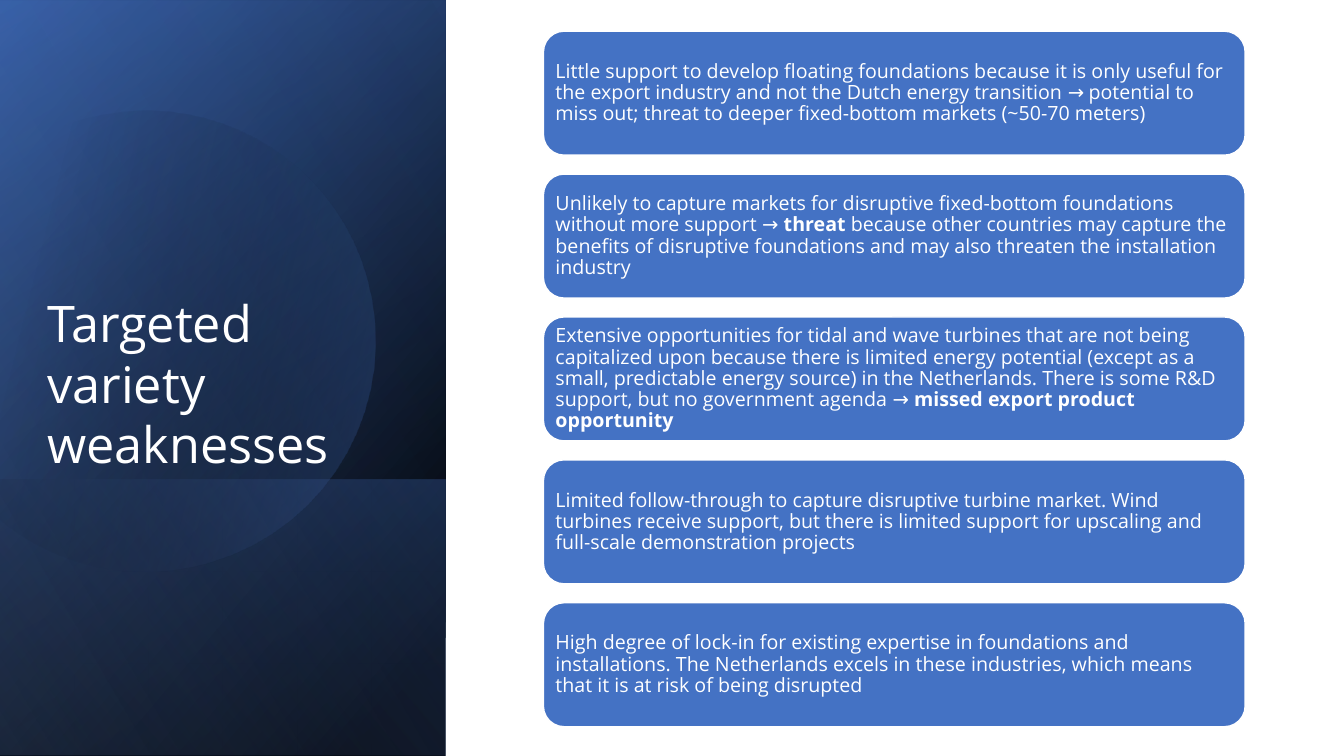
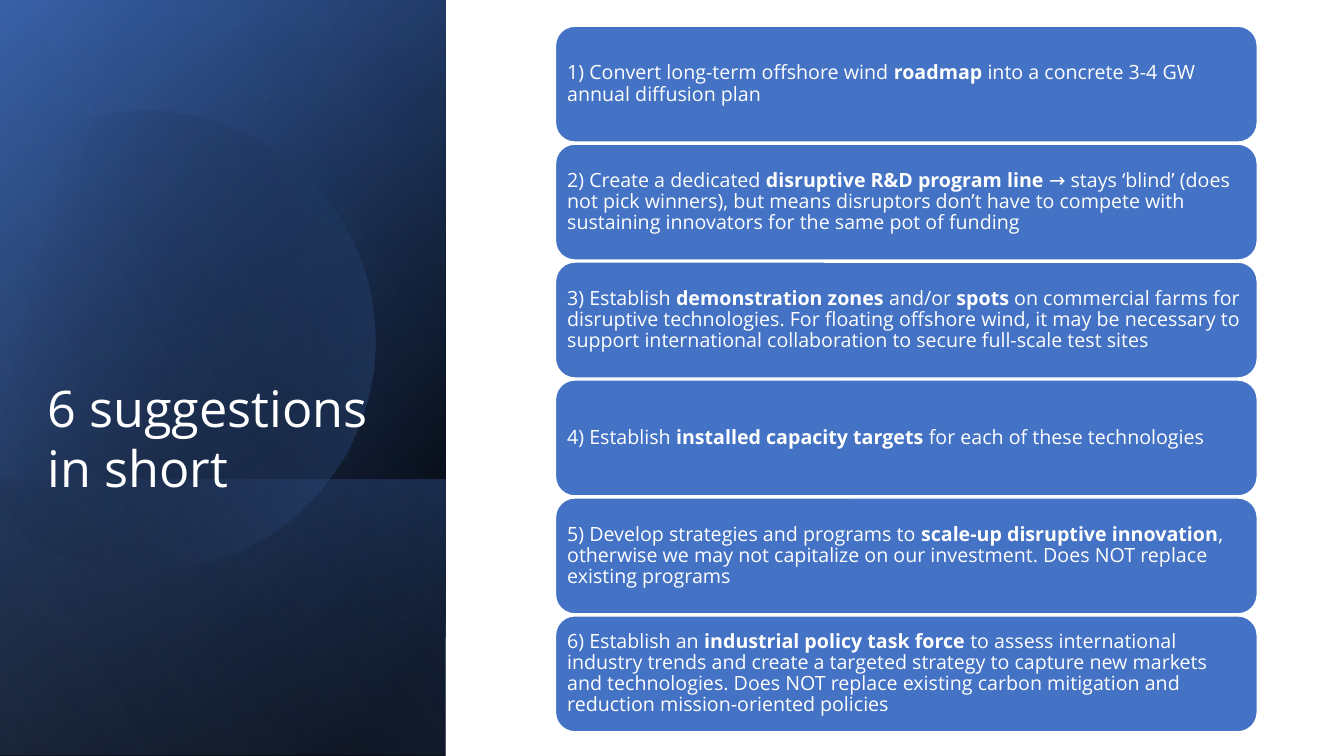
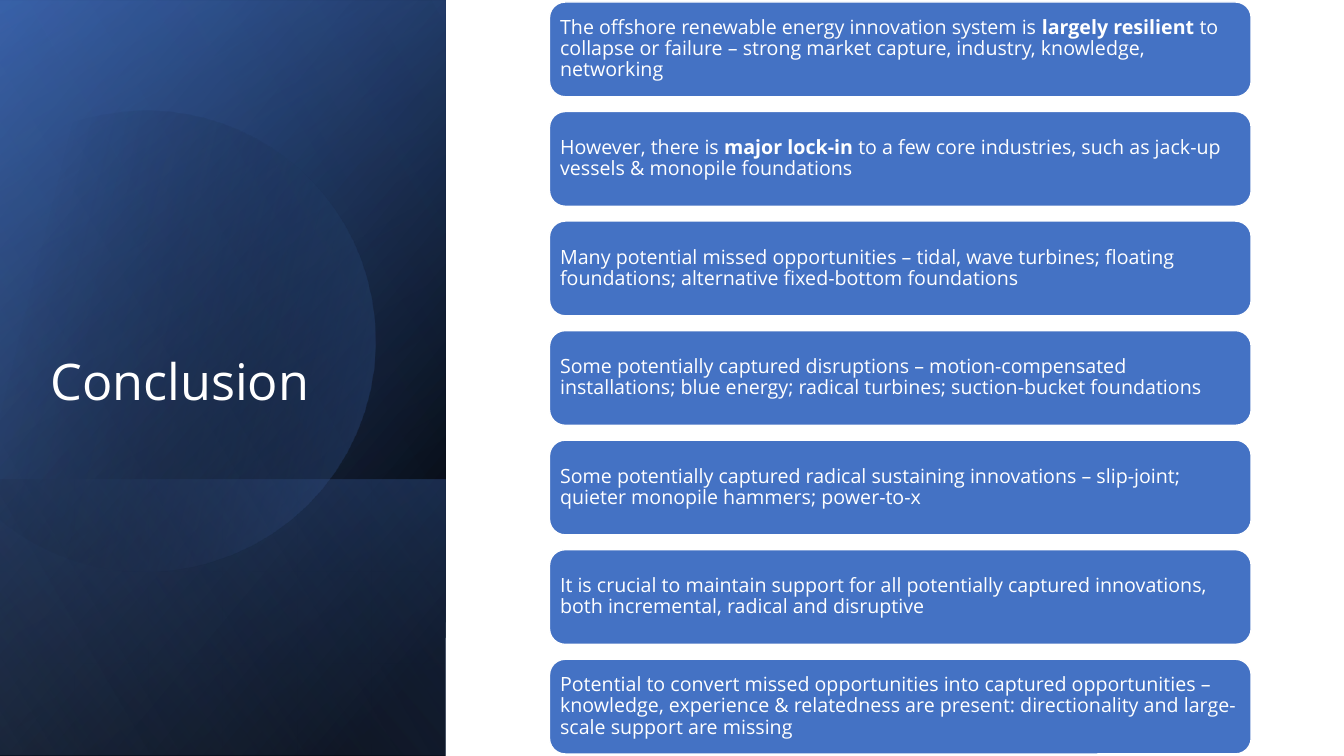
from math import cos, radians, sin

from lxml.etree import SubElement
from pptx import Presentation
from pptx.dml.color import RGBColor
from pptx.enum.shapes import MSO_SHAPE as SHAPE
from pptx.enum.text import MSO_ANCHOR as ANCHOR, MSO_AUTO_SIZE as AUTO_SIZE, PP_ALIGN as ALIGN
from pptx.oxml.ns import qn
from pptx.util import Inches, Pt

WHITE = RGBColor(0xFF, 0xFF, 0xFF)
BLACK = RGBColor(0x00, 0x00, 0x00)
BLUE = RGBColor(0x44, 0x72, 0xC4)
DARK_BLUE = RGBColor(0x2F, 0x55, 0x97)
LIGHT_BLUE = RGBColor(0x8F, 0xAA, 0xDC)
FONT = "Open Sans"

CARD_WIDTH = 6.96
CARD_INSET = Inches(0.06)

BASE_BANDS = [
    ((-1.54, 1.54, 7.5, 4.42), 50, [(8, BLACK, 100), (100, DARK_BLUE, 100)]),
    ((-1.54, 1.55, 7.5, 4.42), 30, [(0, BLACK, 0), (99, BLUE, 46)]),
    ((0.84, 3.92, 2.74, 4.42), 130, [(2, BLUE, 29), (100, BLACK, 30)]),
]
GLOSS_BAND = ((-1.54, 1.53, 7.5, 4.42), 120, [(0, BLACK, 0), (99, LIGHT_BLUE, 11)])

DISC_CENTER = (1.59, 3.35)
DISC_ROTATION = 343.9
DISC_START = (1.49, 1.1)
DISC_SEGMENTS = [
    [(2.46, 1.12), (3.35, 1.77), (3.63, 2.75)],
    [(3.98, 3.97), (3.28, 5.23), (2.07, 5.58)],
    [(1.31, 5.8), (0.53, 5.61), (-0.03, 5.14)],
    [(-0.15, 5.03)],
    [(-0.15, 1.75)],
    [(0, 1.61)],
    [(0.23, 1.42), (0.5, 1.28), (0.8, 1.19)],
    [(1.03, 1.13), (1.26, 1.1), (1.49, 1.1)],
]

WEAKNESSES = [
    "Little support to develop floating foundations because it is only useful for the export "
    "industry and not the Dutch energy transition → potential to miss out; threat to deeper "
    "fixed-bottom markets (~50-70 meters)",
    "Unlikely to capture markets for disruptive fixed-bottom foundations without more support → "
    "**threat** because other countries may capture the benefits of disruptive foundations and "
    "may also threaten the installation industry",
    "Extensive opportunities for tidal and wave turbines that are not being capitalized upon "
    "because there is limited energy potential (except as a small, predictable energy source) in "
    "the Netherlands. There is some R&D support, but no government agenda → "
    "**missed export product opportunity**",
    "Limited follow-through to capture disruptive turbine market. Wind turbines receive support, "
    "but there is limited support for upscaling and full-scale demonstration projects",
    "High degree of lock-in for existing expertise in foundations and installations. The "
    "Netherlands excels in these industries, which means that it is at risk of being disrupted",
]
SUGGESTIONS = [
    "1) Convert long-term offshore wind **roadmap** into a concrete 3-4 GW annual diffusion plan",
    "2) Create a dedicated **disruptive R&D program line **→ stays ‘blind’ (does not pick "
    "winners), but means disruptors don’t have to compete with sustaining innovators for the "
    "same pot of funding",
    "3) Establish **demonstration zones** and/or **spots** on commercial farms for disruptive "
    "technologies. For floating offshore wind, it may be necessary to support international "
    "collaboration to secure full-scale test sites",
    "4) Establish **installed capacity targets** for each of these technologies",
    "5) Develop strategies and programs to **scale-up disruptive innovation**, otherwise we may "
    "not capitalize on our investment. Does NOT replace existing programs",
    "6) Establish an **industrial policy task force** to assess international industry trends "
    "and create a targeted strategy to capture new markets and technologies. Does NOT replace "
    "existing carbon mitigation and reduction mission-oriented policies",
]
CONCLUSIONS = [
    "The offshore renewable energy innovation system is **largely resilient** to collapse or "
    "failure – strong market capture, industry, knowledge, networking",
    "However, there is **major lock-in** to a few core industries, such as jack-up vessels & "
    "monopile foundations",
    "Many potential missed opportunities – tidal, wave turbines; floating foundations; "
    "alternative fixed-bottom foundations",
    "Some potentially captured disruptions – motion-compensated installations; blue energy; "
    "radical turbines; suction-bucket foundations",
    "Some potentially captured radical sustaining innovations – slip-joint; quieter monopile "
    "hammers; power-to-x",
    "It is crucial to maintain support for all potentially captured innovations, both "
    "incremental, radical and disruptive",
    "Potential to convert missed opportunities into captured opportunities – knowledge, "
    "experience & relatedness are present: directionality and large-scale support are missing",
]


def style_run(run, size, bold=False):
    run.font.name = FONT
    run.font.size = Pt(size)
    run.font.bold = bold
    run.font.color.rgb = WHITE


def apply_gradient(shape, angle, stops):
    shape.shadow.inherit = False
    shape.line.fill.background()
    shape.fill.gradient()
    shape.fill.gradient_angle = 360 - angle
    for stop, (position, color, _) in zip(shape.fill.gradient_stops, stops):
        stop.position = position / 100
        stop.color.rgb = color
    colors = shape.element.spPr.iter(qn("a:srgbClr"))
    for color, (_, _, opacity) in zip(list(colors), stops):
        if opacity < 100:
            SubElement(color, qn("a:alpha")).set("val", str(opacity * 1000))


def add_band(slide, frame, angle, stops):
    band = slide.shapes.add_shape(SHAPE.RECTANGLE, *map(Inches, frame))
    band.rotation = 90
    band.element.spPr.get_or_add_xfrm().set("flipH", "1")
    apply_gradient(band, angle, stops)


def bezier_points(start, first, second, end, steps=16):
    for step in range(1, steps + 1):
        t = step / steps
        weights = ((1 - t) ** 3, 3 * t * (1 - t) ** 2, 3 * t * t * (1 - t), t ** 3)
        yield tuple(
            sum(weight * value for weight, value in zip(weights, axis))
            for axis in zip(start, first, second, end)
        )


def disc_outline():
    outline = [DISC_START]
    for segment in DISC_SEGMENTS:
        outline += bezier_points(outline[-1], *segment) if len(segment) == 3 else segment
    return outline


def turn_back(point):
    turn = radians(-DISC_ROTATION)
    center_x, center_y = DISC_CENTER
    dx, dy = point[0] - center_x, point[1] - center_y
    return (
        Inches(center_x + dx * cos(turn) - dy * sin(turn)),
        Inches(center_y + dx * sin(turn) + dy * cos(turn)),
    )


def add_disc(slide):
    start, *others = map(turn_back, disc_outline())
    builder = slide.shapes.build_freeform(*start)
    builder.add_line_segments(others, close=True)
    disc = builder.convert_to_shape()
    disc.rotation = DISC_ROTATION
    apply_gradient(disc, 30, [(29, BLACK, 0), (100, BLUE, 43)])


def place_title(slide, text, frame, align):
    title = slide.shapes.title
    slide.shapes.element.append(title.element)
    title.left, title.top, title.width, title.height = map(Inches, frame)
    title.text_frame.text = text
    title.text_frame.word_wrap = True
    title.text_frame.auto_size = AUTO_SIZE.NONE
    title.text_frame.vertical_anchor = ANCHOR.BOTTOM
    paragraph = title.text_frame.paragraphs[0]
    paragraph.alignment = align
    style_run(paragraph.runs[0], 36)


def add_card(slide, text, left, top, height):
    card = slide.shapes.add_shape(
        SHAPE.ROUNDED_RECTANGLE, Inches(left), Inches(top), Inches(CARD_WIDTH), Inches(height)
    )
    card.shadow.inherit = False
    card.fill.solid()
    card.fill.fore_color.rgb = BLUE
    card.line.color.rgb = WHITE
    card.line.width = Pt(1)
    frame = card.text_frame
    frame.word_wrap = True
    frame.vertical_anchor = ANCHOR.MIDDLE
    frame.margin_left = frame.margin_right = CARD_INSET
    frame.margin_top = frame.margin_bottom = CARD_INSET
    paragraph = frame.paragraphs[0]
    paragraph.alignment = ALIGN.LEFT
    paragraph.line_spacing = 0.9
    for index, part in enumerate(text.split("**")):
        if part:
            run = paragraph.add_run()
            run.text = part
            style_run(run, 14, bold=index % 2 == 1)


def add_cards(slide, texts, left, first_top, last_top, height):
    pitch = (last_top - first_top) / (len(texts) - 1)
    for row, text in enumerate(texts):
        add_card(slide, text, left, first_top + row * pitch, height)


def add_panel_slide(deck, title, title_frame, align, cards, card_column):
    slide = deck.slides.add_slide(deck.slide_layouts[5])
    for band in BASE_BANDS:
        add_band(slide, *band)
    add_disc(slide)
    add_band(slide, *GLOSS_BAND)
    place_title(slide, title, title_frame, align)
    add_cards(slide, cards, *card_column)


def main():
    deck = Presentation()
    deck.slide_width, deck.slide_height = Inches(13.33), Inches(7.5)
    add_panel_slide(deck, "Targeted variety weaknesses", (0.37, 2.74, 3.5, 2.01), ALIGN.LEFT,
                    WEAKNESSES, (5.39, 0.31, 5.98, 1.23))
    add_panel_slide(deck, "6 suggestions in short", (0.37, 2.53, 3.83, 2.46), ALIGN.LEFT,
                    SUGGESTIONS, (5.51, 0.26, 6.11, 1.15))
    add_panel_slide(deck, "Conclusion", (0.37, 3.39, 2.83, 0.73), ALIGN.CENTER,
                    CONCLUSIONS, (5.45, 0.02, 6.54, 0.94))
    deck.save("out.pptx")


if __name__ == "__main__":
    main()
